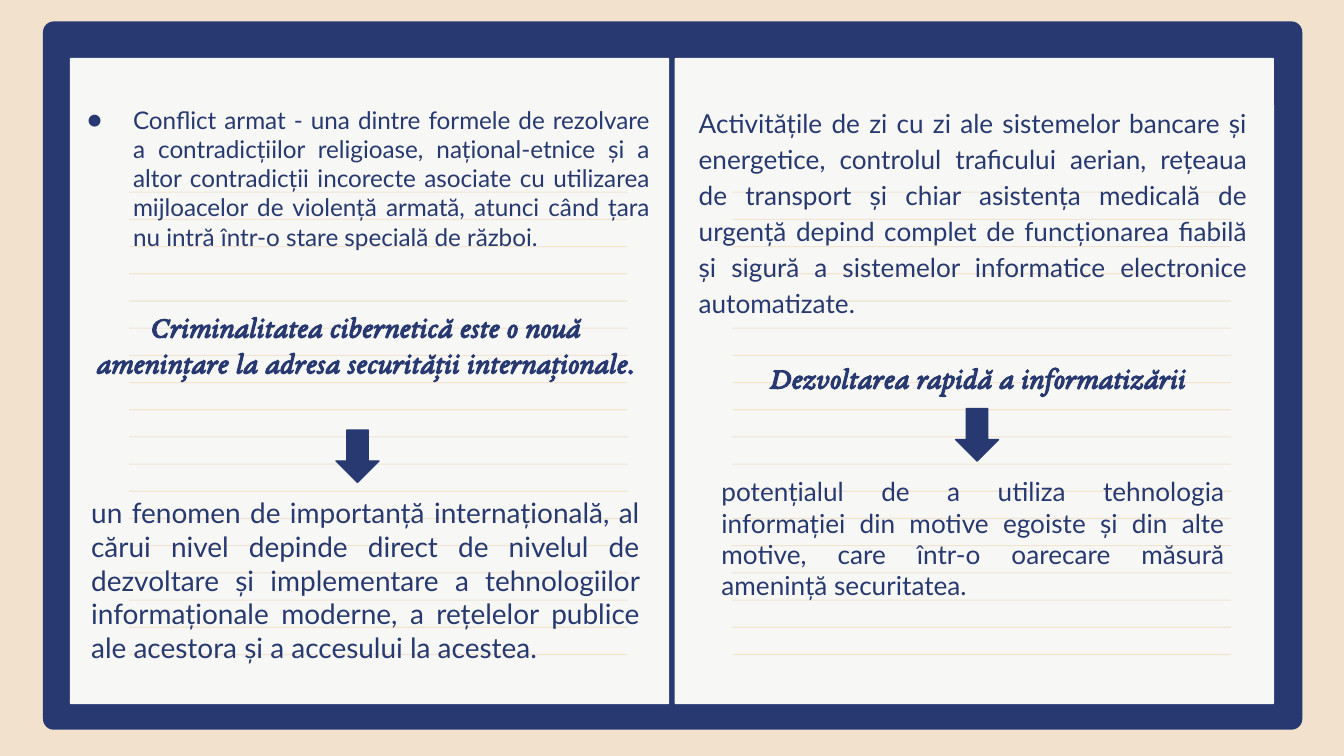
from lxml import etree
from pptx import Presentation
from pptx.dml.color import RGBColor
from pptx.enum.shapes import MSO_CONNECTOR, MSO_SHAPE
from pptx.enum.text import MSO_ANCHOR, MSO_AUTO_SIZE, PP_ALIGN
from pptx.oxml.ns import qn
from pptx.util import Inches, Pt

JUSTIFY, CENTER = PP_ALIGN.JUSTIFY, PP_ALIGN.CENTER
TOP, MIDDLE = MSO_ANCHOR.TOP, MSO_ANCHOR.MIDDLE
ROUNDED, ARROW = MSO_SHAPE.ROUNDED_RECTANGLE, MSO_SHAPE.DOWN_ARROW
STRAIGHT, NO_AUTOFIT = MSO_CONNECTOR.STRAIGHT, MSO_AUTO_SIZE.NONE

NAVY, PAPER, SAND = "273970", "F7F7F5", "F2E1CC"
TITLE_ONLY = 5
SLIDE_WIDTH = 10
SLIDE_HEIGHT = SLIDE_WIDTH * 9 / 16

BODY = {"name": "Lato", "bold": False, "italic": False}
EMPHASIS = {"name": "EB Garamond", "bold": True, "italic": True}

TITLE = {
    "place": (0.39, 0.46, 4.54, 1.73),
    "text": "Conflict armat - una dintre formele de rezolvare a contradicțiilor "
            "religioase, național-etnice și a altor contradicții incorecte asociate "
            "cu utilizarea mijloacelor de violență armată, atunci când țara nu intră "
            "într-o stare specială de război.",
    "font": BODY, "size": 13, "align": JUSTIFY, "anchor": MIDDLE, "spacing": 1.0,
}
TEXTS = [
    {"place": (5.1, 0.46, 4.28, 2.22),
     "text": "Activitățile de zi cu zi ale sistemelor bancare și energetice, controlul "
             "traficului aerian, rețeaua de transport și chiar asistența medicală de "
             "urgență depind complet de funcționarea fiabilă și sigură a sistemelor "
             "informatice electronice automatizate.",
     "font": BODY, "size": 14, "align": JUSTIFY, "anchor": MIDDLE, "spacing": 1.15},
    {"place": (0.58, 2.19, 4.28, 1.01),
     "text": "Criminalitatea cibernetică este o nouă amenințare la adresa securității "
             "internaționale.",
     "font": EMPHASIS, "size": 16, "align": CENTER, "anchor": TOP, "spacing": 1.0},
    {"place": (0.58, 3.59, 4.28, 1.72),
     "text": "un fenomen de importanță internațională, al cărui nivel depinde direct de "
             "nivelul de dezvoltare și implementare a tehnologiilor informaționale "
             "moderne, a rețelelor publice ale acestora și a accesului la acestea.",
     "font": BODY, "size": 15, "align": JUSTIFY, "anchor": TOP, "spacing": 1.0},
    {"place": (5.17, 2.57, 4.21, 0.47),
     "text": "Dezvoltarea rapidă a informatizării",
     "font": EMPHASIS, "size": 16, "align": CENTER, "anchor": TOP, "spacing": 1.0},
    {"place": (5.27, 3.44, 3.94, 1.14),
     "text": "potențialul de a utiliza tehnologia informației din motive egoiste și din "
             "alte motive, care într-o oarecare măsură amenință securitatea.",
     "font": BODY, "size": 14, "align": JUSTIFY, "anchor": TOP, "spacing": 1.0},
]
PANELS = [
    ((0.32, 0.16, 9.37, 5.27), 0.08, NAVY),
    ((5.02, 0.43, 4.46, 4.81), 0.01, PAPER),
    ((0.52, 0.43, 4.46, 4.81), 0.01, PAPER),
]
ARROWS = [(2.5, 3.2, 0.32, 0.39), (7.11, 3.04, 0.32, 0.39)]
RULE_LEFTS, RULE_WIDTH = (0.96, 5.45), 3.71
RULE_TOP, RULE_BOTTOM, RULE_COUNT = 1.43, 4.87, 18


def color(code):
    return RGBColor.from_string(code)


def inches(values):
    return [Inches(value) for value in values]


def add_filled(slide, kind, place, code):
    shape = slide.shapes.add_shape(kind, *inches(place))
    shape.shadow.inherit = False
    shape.fill.solid()
    shape.fill.fore_color.rgb = color(code)
    shape.line.fill.background()
    return shape


def add_rule(slide, left, y):
    rule = slide.shapes.add_connector(STRAIGHT, *inches((left, y, left + RULE_WIDTH, y)))
    rule.line.width = Pt(0.6)
    rule.line.color.rgb = color(SAND)
    properties = rule.element.spPr
    shade = next(properties.iter(qn("a:srgbClr")))
    etree.SubElement(shade, qn("a:alpha"), val="85000")
    etree.SubElement(properties, qn("a:effectLst"))


def write_text(box, content):
    box.left, box.top, box.width, box.height = inches(content["place"])
    frame = box.text_frame
    layout = {"word_wrap": True, "auto_size": NO_AUTOFIT,
              "vertical_anchor": content["anchor"]}
    layout.update({f"margin_{side}": Inches(0.1)
                   for side in ("left", "top", "right", "bottom")})
    for name, value in layout.items():
        setattr(frame, name, value)
    para = frame.paragraphs[0]
    para.alignment = content["align"]
    para.line_spacing = content["spacing"]
    span = para.add_run()
    span.text = content["text"]
    for name, value in {**content["font"], "size": Pt(content["size"])}.items():
        setattr(span.font, name, value)
    span.font.color.rgb = color(NAVY)
    return para


def add_bullet(para, left, indent):
    properties = para._p.get_or_add_pPr()
    properties.set("marL", str(Inches(left)))
    properties.set("indent", str(Inches(indent)))
    shade = etree.SubElement(properties, qn("a:buClr"))
    etree.SubElement(shade, qn("a:srgbClr"), val=NAVY)
    etree.SubElement(properties, qn("a:buFont"), typeface="Lato")
    etree.SubElement(properties, qn("a:buChar"), char="●")


def main():
    deck = Presentation()
    deck.slide_width, deck.slide_height = inches((SLIDE_WIDTH, SLIDE_HEIGHT))
    page = deck.slides.add_slide(deck.slide_layouts[TITLE_ONLY])
    page.background.fill.solid()
    page.background.fill.fore_color.rgb = color(SAND)

    for place, radius, code in PANELS:
        panel = add_filled(page, ROUNDED, place, code)
        panel.adjustments[0] = radius / min(place[2:])

    step = (RULE_BOTTOM - RULE_TOP) / (RULE_COUNT - 1)
    for left in RULE_LEFTS:
        for index in range(RULE_COUNT):
            add_rule(page, left, RULE_TOP + index * step)

    title = page.shapes.title
    title.element.getparent().append(title.element)
    add_bullet(write_text(title, TITLE), 0.5, -0.34)

    for content in TEXTS:
        write_text(page.shapes.add_textbox(*inches(content["place"])), content)

    for place in ARROWS:
        arrow = add_filled(page, ARROW, place, NAVY)
        arrow.line.color.rgb = color(NAVY)
        arrow.line.width = Pt(0.75)

    deck.save("out.pptx")


if __name__ == "__main__":
    main()
